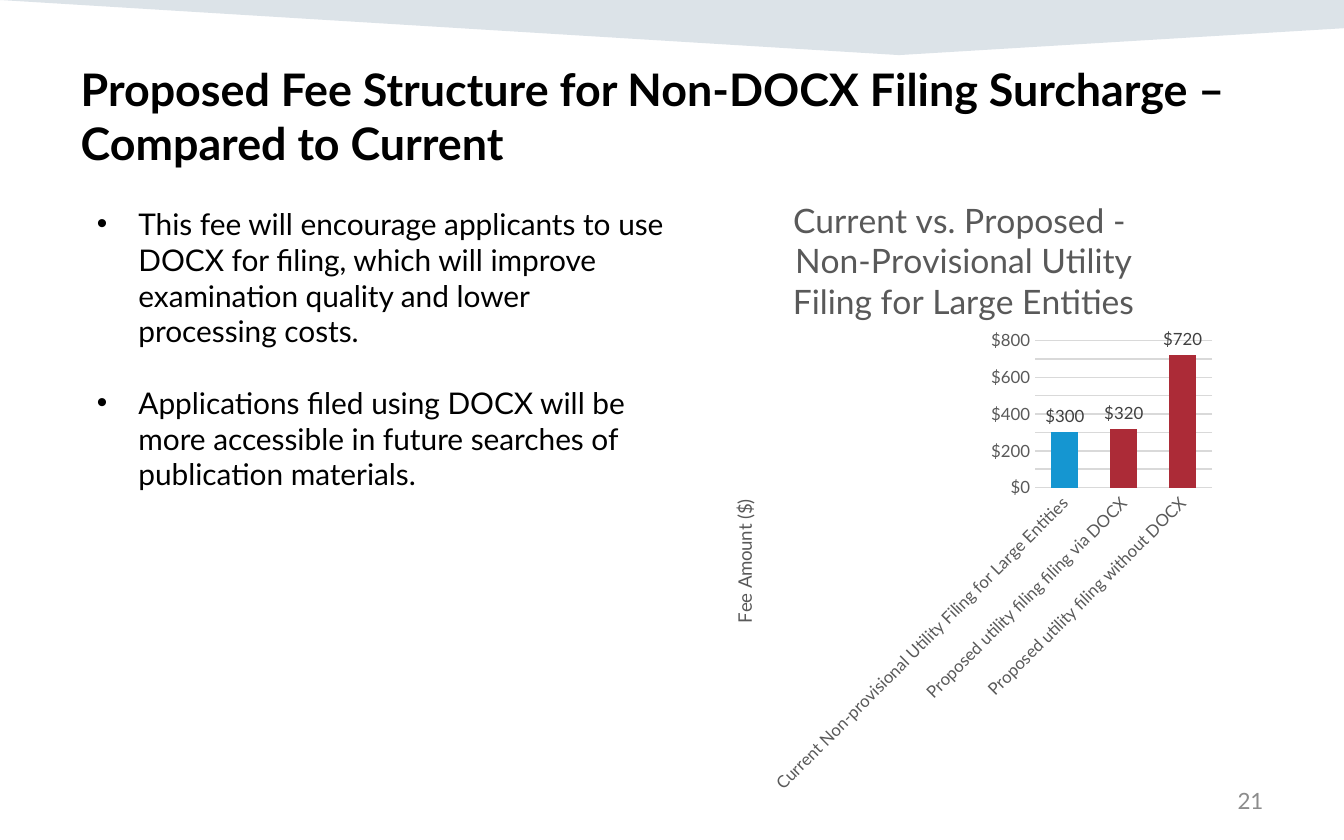
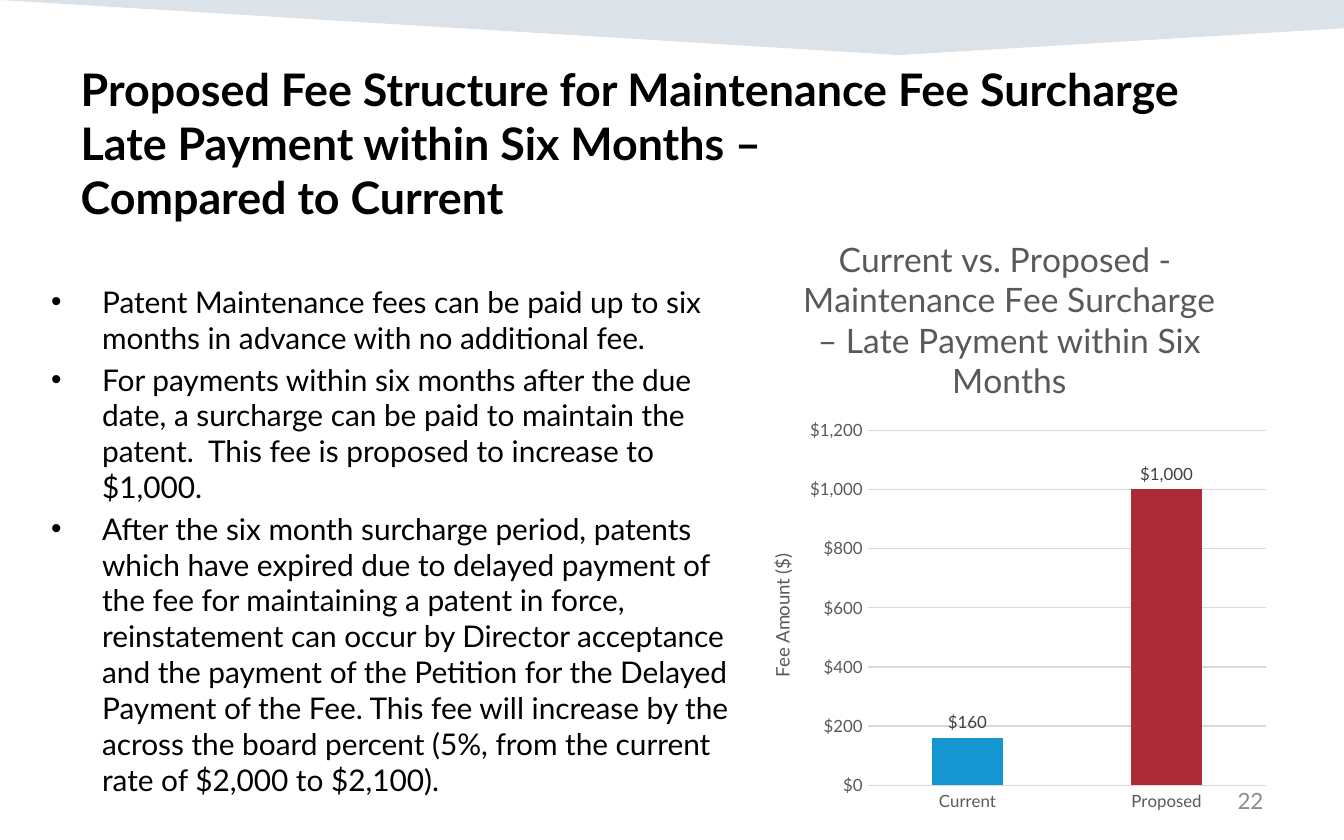
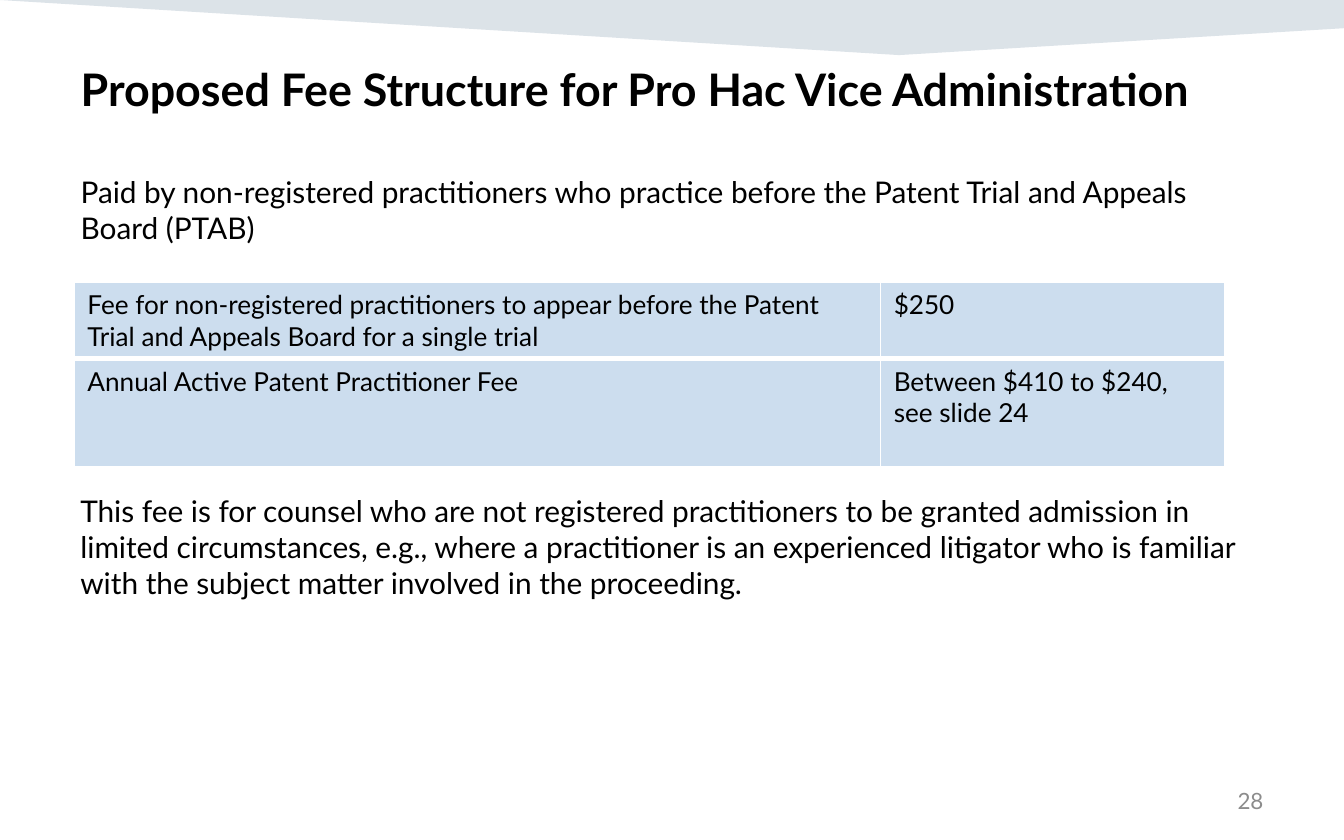
from lxml.etree import SubElement
from pptx import Presentation
from pptx.chart.data import CategoryChartData
from pptx.dml.color import RGBColor
from pptx.enum.chart import XL_CHART_TYPE, XL_LABEL_POSITION, XL_TICK_MARK
from pptx.enum.text import MSO_ANCHOR, MSO_AUTO_SIZE, PP_ALIGN
from pptx.oxml.ns import qn
from pptx.util import Pt

PX = 9144  # 100 px to the inch


class Theme:
    font = "Lato"
    ink = RGBColor.from_string("000000")
    band = RGBColor.from_string("164469")
    number = RGBColor.from_string("8C8C8C")
    chart_text = RGBColor.from_string("595959")
    label_text = RGBColor.from_string("404040")
    rule = RGBColor.from_string("D9D9D9")
    current = RGBColor.from_string("1596D1")
    proposed = RGBColor.from_string("AC2B37")
    cell = RGBColor.from_string("CCDDEE")
    border = "FFFFFF"
    title_size, body_size, table_size, number_size = Pt(24), Pt(16), Pt(14), Pt(12)
    chart_title_size, axis_title_size, tick_size = Pt(18), Pt(10), Pt(9)
    dollars = '"$"#,##0'


def write(frame, text, size, color=Theme.ink, bold=False, align=PP_ALIGN.LEFT,
          gap=0, indent=None):
    """Fill a frame; indent is None for inherited bullets, 0 for none, else px."""
    frame.text = text
    for i, paragraph in enumerate(frame.paragraphs):
        if indent is not None:
            pPr = paragraph._p.get_or_add_pPr()
            pPr.set("marL", str(indent * PX))
            pPr.set("indent", str(-indent * PX))
            if indent:
                SubElement(pPr, qn("a:buChar")).set("char", "•")
            else:
                SubElement(pPr, qn("a:buNone"))
        formats = {"alignment": align, "space_before": Pt(gap if i else 0)}
        for key, value in formats.items():
            setattr(paragraph, key, value)
        for run in paragraph.runs:
            for key, value in {"name": Theme.font, "size": size, "bold": bold}.items():
                setattr(run.font, key, value)
            run.font.color.rgb = color


pages = [
    {
        "number": "21",
        "title": "Proposed Fee Structure for Non-DOCX Filing Surcharge – \vCompared to Current",
        "title_box": (50, 41, 923, 79),
        "body": "This fee will encourage applicants to use DOCX for filing, which will improve "
                "examination quality and lower processing costs.\n"
                "Applications filed using DOCX will be more accessible in future searches of "
                "publication materials.",
        "body_box": (62, 148, 448, 226), "gap": 19, "indent": 31,
        "chart": {
            "box": (524, 129, 386, 462),
            "title": "Current vs. Proposed - \nNon-Provisional Utility Filing for Large Entities",
            "fees": {"Current Non-provisional Utility Filing for Large Entities": 300,
                     "Proposed utility filing filing via DOCX": 320,
                     "Proposed utility filing without DOCX": 720},
            "top": 800, "step": 100, "gap_width": 119, "label_turn": -45,
        },
    },
    {
        "number": "22",
        "title": "Proposed Fee Structure for Maintenance Fee Surcharge Late Payment within "
                 "Six Months – \vCompared to Current",
        "title_box": (50, 41, 900, 133),
        "body": "Patent Maintenance fees can be paid up to six months in advance with no "
                "additional fee.\n"
                "For payments within six months after the due date, a surcharge can be paid to "
                "maintain the patent.  This fee is proposed to increase to $1,000.\n"
                "After the six month surcharge period, patents which have expired due to delayed "
                "payment of the fee for maintaining a patent in force, reinstatement can occur by "
                "Director acceptance and the payment of the Petition for the Delayed Payment of "
                "the Fee. This fee will increase by the across the board percent (5%, from the "
                "current rate of $2,000 to $2,100).",
        "body_box": (28, 206, 545, 373), "gap": 3.2, "indent": 38,
        "chart": {
            "box": (552, 158, 398, 455),
            "title": "Current vs. Proposed - \nMaintenance Fee Surcharge – Late Payment "
                     "within Six Months",
            "fees": {"Current": 160, "Proposed": 1000},
            "top": 1200, "step": 200, "gap_width": 183, "label_turn": 0,
        },
    },
    {
        "number": "28",
        "title": "Proposed Fee Structure for Pro Hac Vice Administration",
        "title_box": (50, 41, 900, 65),
        "body": "Paid by non-registered practitioners who practice before the Patent Trial and "
                "Appeals Board (PTAB)",
        "body_box": (50, 124, 900, 90), "gap": 0, "indent": 0,
    },
]

prs = Presentation()
prs.slide_width, prs.slide_height = 1000 * PX, 625 * PX

for page in pages:
    slide = prs.slides.add_slide(prs.slide_layouts[1])

    # Title, body and slide number
    heading, body = slide.placeholders
    number = slide.shapes.add_textbox(0, 0, PX, PX)
    for part, box in ((heading, page["title_box"]), (body, page["body_box"]),
                      (number, (717, 579, 233, 33))):
        for key, value in zip(("left", "top", "width", "height"), box):
            setattr(part, key, value * PX)
        for key, value in {"word_wrap": True, "auto_size": MSO_AUTO_SIZE.NONE,
                           "vertical_anchor": MSO_ANCHOR.TOP}.items():
            setattr(part.text_frame, key, value)
    number.text_frame.vertical_anchor = MSO_ANCHOR.MIDDLE
    write(heading.text_frame, page["title"], Theme.title_size, bold=True)
    write(body.text_frame, page["body"], Theme.body_size,
          gap=page["gap"], indent=page["indent"])
    write(number.text_frame, page["number"], Theme.number_size, Theme.number,
          align=PP_ALIGN.RIGHT)

    if "chart" not in page:
        continue

    # Fee chart
    plan = page["chart"]
    data = CategoryChartData()
    data.categories = list(plan["fees"])
    data.add_series("Series 1", list(plan["fees"].values()))
    chart = slide.shapes.add_chart(XL_CHART_TYPE.COLUMN_CLUSTERED,
                                   *(side * PX for side in plan["box"]), data).chart
    chart.has_legend = False
    chart.font.name, chart.font.size = Theme.font, Theme.axis_title_size
    write(chart.chart_title.text_frame, plan["title"], Theme.chart_title_size,
          Theme.chart_text, align=PP_ALIGN.CENTER)
    chart.chart_title.include_in_layout = False

    # Columns: the first fee is the current one
    columns = chart.plots[0]
    for key, value in {"gap_width": plan["gap_width"], "overlap": -27,
                       "vary_by_categories": False, "has_data_labels": True}.items():
        setattr(columns, key, value)
    series = columns.series[0]
    series.format.fill.solid()
    series.format.fill.fore_color.rgb = Theme.current
    for i in range(1, len(plan["fees"])):
        fill = series.points[i].format.fill
        fill.solid()
        fill.fore_color.rgb = Theme.proposed
    labels = columns.data_labels
    for key, value in {"show_value": True, "number_format": Theme.dollars,
                       "number_format_is_linked": False,
                       "position": XL_LABEL_POSITION.OUTSIDE_END}.items():
        setattr(labels, key, value)

    # Axes
    fee_axis, filing_axis = chart.value_axis, chart.category_axis
    for key, value in {"minimum_scale": 0, "maximum_scale": plan["top"],
                       "major_unit": plan["step"], "has_major_gridlines": True}.items():
        setattr(fee_axis, key, value)
    for axis in (fee_axis, filing_axis):
        axis.major_tick_mark = axis.minor_tick_mark = XL_TICK_MARK.NONE
    for font, color in ((fee_axis.tick_labels.font, Theme.chart_text),
                        (filing_axis.tick_labels.font, Theme.chart_text),
                        (labels.font, Theme.label_text)):
        font.name, font.size = Theme.font, Theme.tick_size
        font.color.rgb = color
    for line in (fee_axis.major_gridlines.format.line, filing_axis.format.line):
        line.color.rgb, line.width = Theme.rule, Pt(0.75)
    fee_axis.format.line.fill.background()
    fee_axis.tick_labels.number_format = Theme.dollars
    fee_axis.tick_labels.number_format_is_linked = False
    axis_title = fee_axis.axis_title.text_frame
    write(axis_title, "Fee Amount ($)", Theme.axis_title_size, Theme.chart_text,
          align=PP_ALIGN.CENTER)

    # Turned axis texts, in 60000ths of a degree
    for text_body, degrees in ((filing_axis._element.find(qn("c:txPr")), plan["label_turn"]),
                               (axis_title._txBody, -90)):
        text_body.find(qn("a:bodyPr")).set("rot", str(degrees * 60000))

# Fee table on the last slide
fees = [
    ("Fee for non-registered practitioners to appear before the Patent Trial and Appeals "
     "Board for a single trial", "$250"),
    ("Annual Active Patent Practitioner Fee", "Between $410 to $240, see slide 24"),
]
table = slide.shapes.add_table(2, 2, 55 * PX, 210 * PX, 856 * PX, 137 * PX).table
table.first_row = table.horz_banding = False
for column, width in zip(table.columns, (600, 256)):
    column.width = width * PX
for row, height in zip(table.rows, (57, 80)):
    row.height = height * PX
for r, fee in enumerate(fees):
    for c, text in enumerate(fee):
        cell = table.cell(r, c)
        write(cell.text_frame, text, Theme.table_size)
        tcPr = cell._tc.get_or_add_tcPr()
        for side in ("lnL", "lnR", "lnT", "lnB"):
            thick = (r, side) in ((0, "lnB"), (1, "lnT"))
            border = SubElement(tcPr, qn(f"a:{side}"), w=str(Pt(3 if thick else 1)))
            SubElement(SubElement(border, qn("a:solidFill")), qn("a:srgbClr"),
                       val=Theme.border)
        cell.fill.solid()
        cell.fill.fore_color.rgb = Theme.cell

# Closing remark
remark = slide.shapes.add_textbox(50 * PX, 362 * PX, 900 * PX, 100 * PX).text_frame
remark.word_wrap = True
write(remark, "This fee is for counsel who are not registered practitioners to be granted "
              "admission in limited circumstances, e.g., where a practitioner is an experienced "
              "litigator who is familiar with the subject matter involved in the proceeding.",
      Theme.body_size)

# Top band, moved to the master so that every slide shares it
outline = slide.shapes.build_freeform(0, 0, scale=PX)
outline.add_line_segments([(1000, 0), (1000, 21), (669, 41)], close=True)
band = outline.convert_to_shape()
band.shadow.inherit = False
band.line.fill.background()
band.fill.solid()
band.fill.fore_color.rgb = Theme.band
tint = band._element.spPr.find(qn("a:solidFill"))[0]
SubElement(tint, qn("a:alpha")).set("val", "15000")
prs.slide_master.shapes._spTree.insert(2, band._element)

prs.save("out.pptx")
